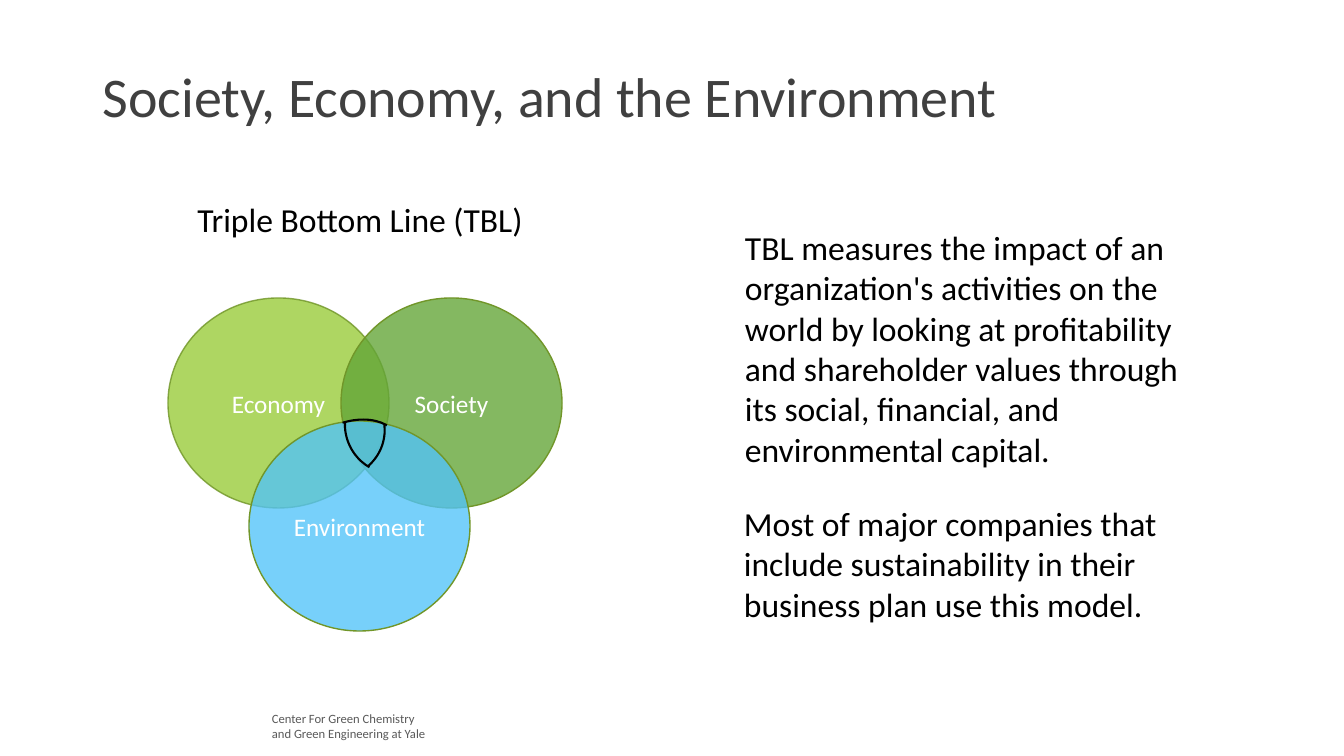
from pptx import Presentation
from pptx.dml.color import RGBColor
from pptx.enum.shapes import MSO_SHAPE
from pptx.enum.text import MSO_ANCHOR, PP_ALIGN
from pptx.oxml.ns import qn
from pptx.util import Emu, Pt
from lxml import etree

ELLIPSE, ARC = MSO_SHAPE.OVAL, MSO_SHAPE.ARC
TOP, MIDDLE = MSO_ANCHOR.TOP, MSO_ANCHOR.MIDDLE
LEFT, CENTER = PP_ALIGN.LEFT, PP_ALIGN.CENTER

TEXTS = [
    dict(role="footer", box=(262, 706, 187, 40), align=LEFT, anchor=TOP,
         lines=["Center For Green Chemistry", "and Green Engineering at Yale"]),
    dict(role="caption", box=(40, 199, 640, 46), align=CENTER, anchor=MIDDLE,
         lines=["Triple Bottom Line (TBL)"], spacing=0.9),
    dict(role="body", box=(735, 222, 483, 254), align=LEFT, anchor=TOP,
         lines=["TBL measures the impact of an organization's activities on the world "
                "by looking at profitability and shareholder values through its social, "
                "financial, and environmental capital."]),
    dict(role="body", box=(734, 498, 481, 132), align=LEFT, anchor=TOP,
         lines=["Most of major companies that include sustainability in their "
                "business plan use this model."]),
    dict(role="title", box=(76, 57, 947, 78), align=CENTER, anchor=TOP,
         lines=["Society, Economy, and the Environment"], wrap=False),
]
PILLAR_SIZE = (221, 210)
PILLARS = [
    ("Economy", (168, 298), 79, 81),
    ("Society", (341, 298), 79, 100),
    ("Environment", (249, 421), 78, 100),
]
OVERLAP_EDGES = [
    ((345, 374, 99, 100), 22.5, (166.56, 203.8)),
    ((299, 422, 103, 70), 159.3, (166.56, 203.8)),
    ((288, 382, 94, 100), 253.4, (166.56, 199.62)),
]
THEME = {
    "font": "Calibri",
    "footer": (9, "595959"),
    "caption": (24, "000000"),
    "body": (24, "000000"),
    "title": (40, "404040"),
    "pillar": (18, "FFFFFF"),
    "Economy": "99CB38",
    "Society": "63A537",
    "Environment": "51C3F9",
    "outline": ("719629", 1),
    "overlap": ("000000", 1.5),
}
PX = 914400 / 100.8


def px(*lengths):
    return [Emu(round(length * PX)) for length in lengths]


def write(shape, lines, role, align, anchor, wrap=True, spacing=None):
    frame = shape.text_frame
    frame.word_wrap = wrap
    frame.vertical_anchor = anchor
    size, color = THEME[role]
    for index, line in enumerate(lines):
        paragraph = frame.paragraphs[0] if index == 0 else frame.add_paragraph()
        run = paragraph.add_run()
        run.text = line
        for name, value in {"alignment": align, "line_spacing": spacing}.items():
            setattr(paragraph, name, value)
        for name, value in {"name": THEME["font"], "size": Pt(size)}.items():
            setattr(run.font, name, value)
        run.font.color.rgb = RGBColor.from_string(color)


def paint(fill, color, opacity=100):
    fill.solid()
    fill.fore_color.rgb = RGBColor.from_string(color)
    if opacity < 100:
        tint = fill._xPr.find(qn("a:solidFill"))[0]
        etree.SubElement(tint, qn("a:alpha")).set("val", str(opacity * 1000))


def outline(shape, role, opacity=100):
    color, width = THEME[role]
    shape.shadow.inherit = False
    shape.line.width = Pt(width)
    paint(shape.line.fill, color, opacity)


def add_pillar(slide, label, corner, opacity, line_opacity):
    circle = slide.shapes.add_shape(ELLIPSE, *px(*corner, *PILLAR_SIZE))
    paint(circle.fill, THEME[label], opacity)
    outline(circle, "outline", line_opacity)
    write(circle, [label], "pillar", CENTER, MIDDLE)


def add_overlap_edge(slide, box, rotation, angles):
    edge = slide.shapes.add_shape(ARC, *px(*box))
    edge.rotation = rotation
    for index, angle in enumerate(angles):
        edge.adjustments[index] = angle
    for flip in ("flipH", "flipV"):
        edge._element.spPr.xfrm.set(flip, "1")
    edge.fill.background()
    outline(edge, "overlap")


def main():
    deck = Presentation()
    deck.slide_width, deck.slide_height = px(1344, 756)
    slide = deck.slides.add_slide(deck.slide_layouts[6])
    for pillar in PILLARS:
        add_pillar(slide, *pillar)
    for edge in OVERLAP_EDGES:
        add_overlap_edge(slide, *edge)
    for text in TEXTS:
        options = dict(text)
        box = slide.shapes.add_textbox(*px(*options.pop("box")))
        write(box, **options)
    deck.save("out.pptx")


if __name__ == "__main__":
    main()
